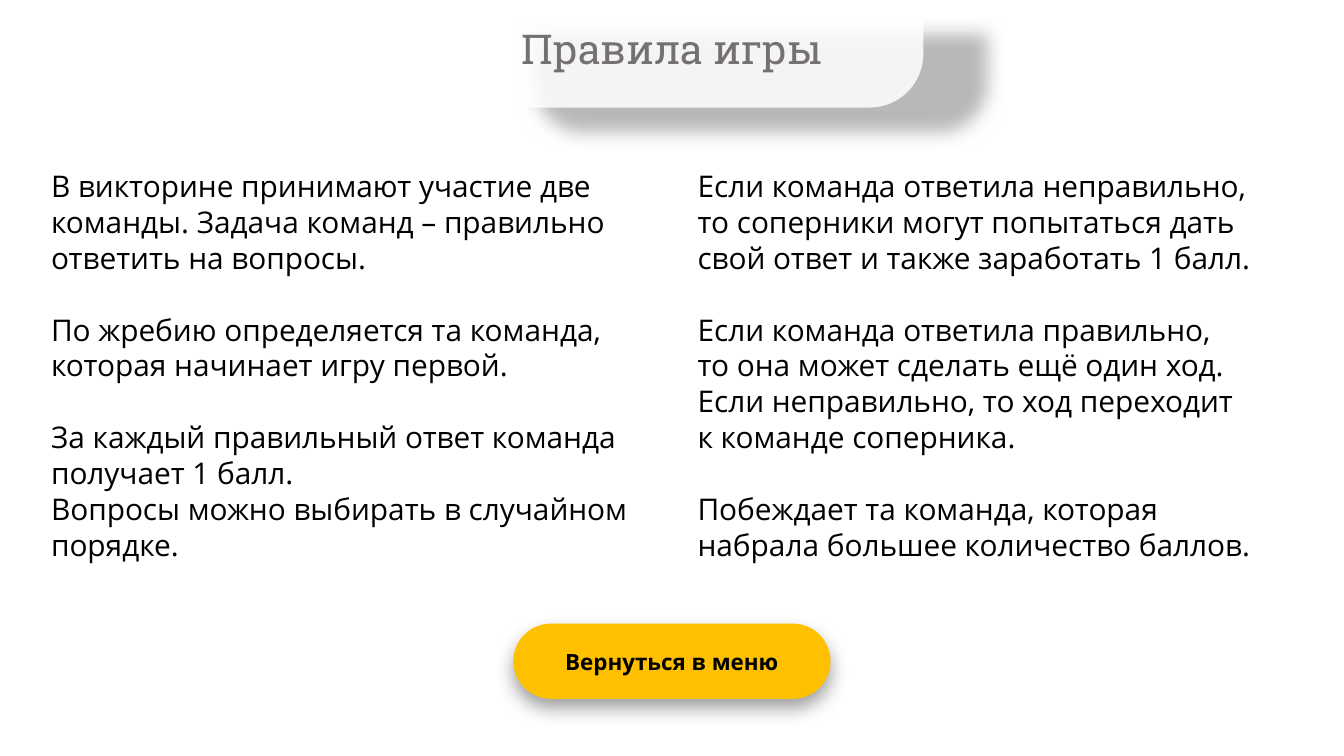
"""Build the quiz rules slide: title tab, two columns of rules and a menu button."""
import pptx
import pptx.dml.color
import pptx.enum.shapes
import pptx.enum.text
import pptx.oxml
import pptx.oxml.ns
import pptx.util

Pt = pptx.util.Pt
RGB = pptx.dml.color.RGBColor.from_string
ALIGN = pptx.enum.text.PP_ALIGN
ANCHOR = pptx.enum.text.MSO_ANCHOR
SHAPE = pptx.enum.shapes.MSO_SHAPE
FIT = pptx.enum.text.MSO_AUTO_SIZE

TITLE = "Правила игры"
MENU_LABEL = "Вернуться в меню"
RULE_COLUMNS = [
    {"left": 20.16, "width": 339.84, "groups": [
        ["В викторине принимают участие две команды. Задача команд – правильно ответить на вопросы."],
        ["По жребию определяется та команда, которая начинает игру первой."],
        ["За каждый правильный ответ команда получает 1 балл.",
         "Вопросы можно выбирать в случайном порядке."],
    ]},
    {"left": 366.48, "width": 321.84, "groups": [
        ["Если команда ответила неправильно, то соперники могут попытаться дать свой ответ "
         "и также заработать 1 балл."],
        ["Если команда ответила правильно, \nто она может сделать ещё один ход.",
         "Если неправильно, то ход переходит \nк команде соперника."],
        ["Побеждает та команда, которая набрала большее количество баллов."],
    ]},
]
THEME = {
    "title": {"font": "Roboto Slab", "size": 22, "color": "767171", "bold": False},
    "rules": {"font": "Open Sans", "size": 16, "color": "000000", "bold": False},
    "menu": {"font": "Open Sans", "size": 12, "color": "000000", "bold": True},
    "tab_fill": "FFFFFF", "menu_fill": "FFC000",
    "tab_shadow": {"color": "595959", "blur": 10, "dist": 10, "angle": 45, "scale": 90, "align": "br"},
    "menu_shadow": {"color": "404040", "blur": 10, "dist": 5, "angle": 90, "scale": 100, "align": "t"},
}
SLIDE_WIDTH, SLIDE_HEIGHT = 720, 405
RULES_TOP, RULES_HEIGHT = 86.4, 220.32
GROUP_GAP = 19.2


def place(part, left, top, width, height):
    part.left, part.top, part.width, part.height = Pt(left), Pt(top), Pt(width), Pt(height)


def write(paragraph, text, style, align=ALIGN.LEFT, gap=0):
    properties = paragraph._p.get_or_add_pPr()
    properties.set("marL", "0")
    properties.set("indent", "0")
    pptx.oxml.ns.qn("a:buNone")
    properties.append(pptx.oxml.parse_xml(f"<a:buNone {pptx.oxml.ns.nsdecls('a')}/>"))
    paragraph.alignment = align
    paragraph.space_before = Pt(gap)
    for index, line in enumerate(text.split("\n")):
        if index:
            paragraph.add_line_break()
        run = paragraph.add_run()
        run.text = line
        run.font.name, run.font.size = style["font"], Pt(style["size"])
        run.font.bold = style["bold"]
        run.font.color.rgb = RGB(style["color"])


def add_panel(shapes, preset, box, fill, shadow):
    panel = shapes.add_shape(preset, *map(Pt, box))
    panel.fill.solid()
    panel.fill.fore_color.rgb = RGB(fill)
    panel.line.fill.background()
    panel.shadow.inherit = False
    effects = panel._element.spPr.find(pptx.oxml.ns.qn("a:effectLst"))
    scale = shadow["scale"] * 1000
    effects.append(pptx.oxml.parse_xml(
        f'<a:outerShdw {pptx.oxml.ns.nsdecls("a")} blurRad="{Pt(shadow["blur"])}" '
        f'dist="{Pt(shadow["dist"])}" dir="{shadow["angle"] * 60000}" sx="{scale}" sy="{scale}" '
        f'algn="{shadow["align"]}" rotWithShape="0"><a:srgbClr val="{shadow["color"]}">'
        '<a:alpha val="50000"/></a:srgbClr></a:outerShdw>'))
    return panel


def add_title_tab(slide):
    tab = add_panel(slide.shapes, SHAPE.ROUND_2_SAME_RECTANGLE, (226.08, 0, 268.56, 57.6),
                    THEME["tab_fill"], THEME["tab_shadow"])
    tab.adjustments[0], tab.adjustments[1] = 0.5, 0
    tab.rotation = 180
    color = tab._element.spPr.find(".//" + pptx.oxml.ns.qn("a:srgbClr"))
    color.append(pptx.oxml.parse_xml(f'<a:alpha {pptx.oxml.ns.nsdecls("a")} val="85000"/>'))
    title = slide.shapes.title
    title._element.addprevious(tab._element)
    place(title, 271.44, 8.64, 177.12, 33.84)
    title.text_frame.word_wrap = False
    title.text_frame.auto_size = FIT.SHAPE_TO_FIT_TEXT
    write(title.text_frame.paragraphs[0], TITLE, THEME["title"], ALIGN.CENTER)


def fill_rules(placeholder, column):
    place(placeholder, column["left"], RULES_TOP, column["width"], RULES_HEIGHT)
    frame = placeholder.text_frame
    frame.word_wrap = True
    frame.auto_size = FIT.SHAPE_TO_FIT_TEXT
    frame.vertical_anchor = ANCHOR.TOP
    rules = [(rule, GROUP_GAP if group_index and not rule_index else 0)
             for group_index, group in enumerate(column["groups"])
             for rule_index, rule in enumerate(group)]
    for index, (rule, gap) in enumerate(rules):
        paragraph = frame.add_paragraph() if index else frame.paragraphs[0]
        write(paragraph, rule, THEME["rules"], gap=gap)


def add_menu_button(shapes):
    button = add_panel(shapes, SHAPE.ROUNDED_RECTANGLE, (275.04, 334.08, 169.92, 40.32),
                       THEME["menu_fill"], THEME["menu_shadow"])
    button.adjustments[0] = 0.5
    frame = button.text_frame
    frame.margin_left = frame.margin_right = Pt(14.4)
    frame.margin_top = frame.margin_bottom = Pt(7.2)
    frame.vertical_anchor = ANCHOR.MIDDLE
    write(frame.paragraphs[0], MENU_LABEL, THEME["menu"], ALIGN.CENTER)


def main():
    deck = pptx.Presentation()
    deck.slide_width, deck.slide_height = Pt(SLIDE_WIDTH), Pt(SLIDE_HEIGHT)
    slide = deck.slides.add_slide(deck.slide_layouts.get_by_name("Two Content"))
    add_title_tab(slide)
    for index, column in enumerate(RULE_COLUMNS, start=1):
        fill_rules(slide.placeholders[index], column)
    add_menu_button(slide.shapes)
    deck.save("out.pptx")


if __name__ == "__main__":
    main()
